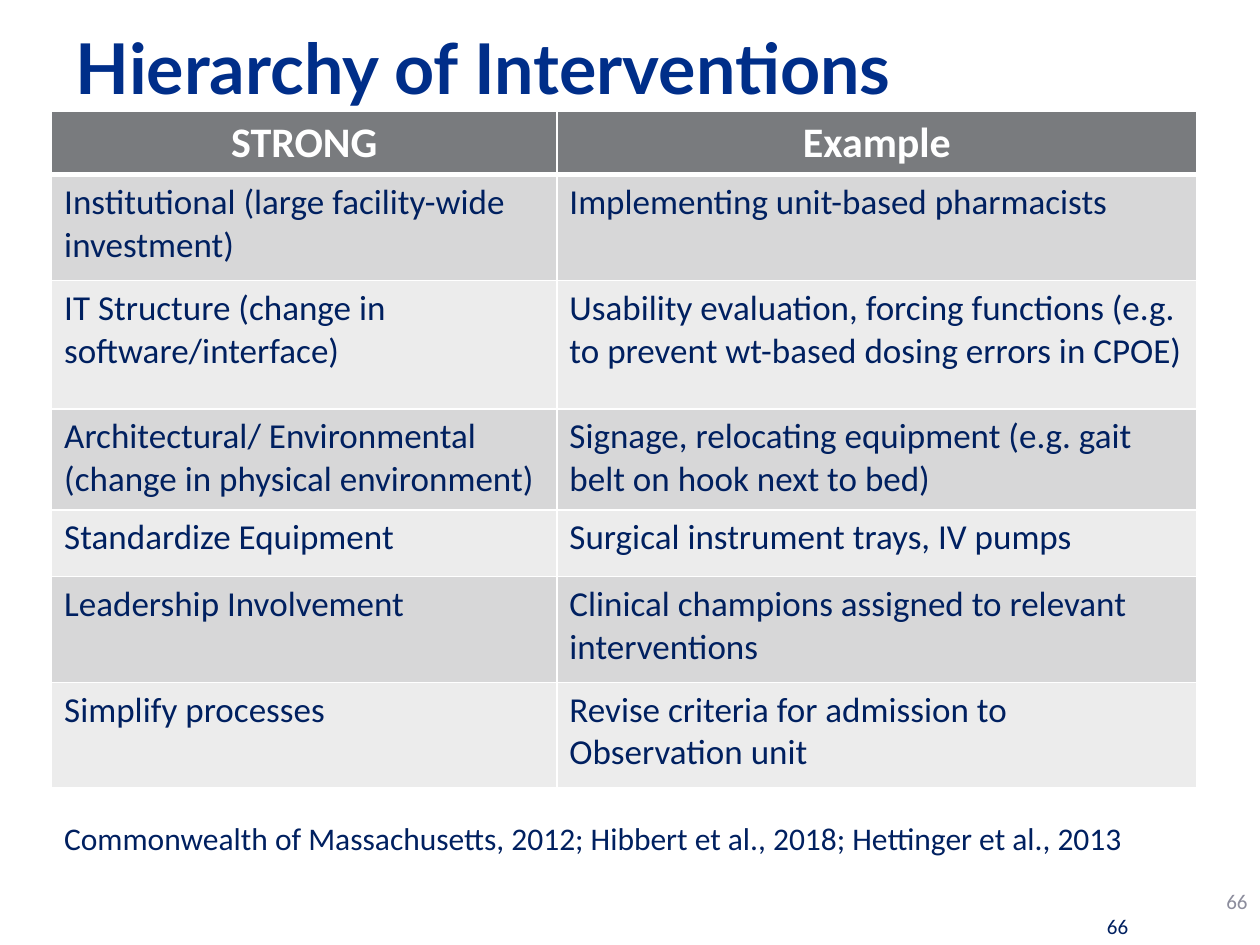
from dataclasses import dataclass

from lxml import etree
from pptx import Presentation
from pptx import util as u
from pptx.dml.color import RGBColor
from pptx.enum import text
from pptx.oxml.ns import qn


@dataclass(frozen=True)
class Theme:
    title_color: str = "002E89"
    body_color: str = "002060"
    muted_color: str = "8C8D9D"
    white: str = "FFFFFF"
    header_fill: str = "797B7E"
    band_fills: tuple[str, str] = ("D7D7D8", "ECECEC")
    title_font: str = "Lato"
    body_font: str = "Calibri"
    title_size: int = 40
    header_size: int = 24
    body_size: int = 20
    source_size: int = 18
    number_size: int = 12


@dataclass(frozen=True)
class Intervention:
    kind: str
    example: str
    height: float


@dataclass(frozen=True)
class Label:
    wording: str
    box: tuple[float, float, float, float]
    size: int
    color: str
    align: text.PP_ALIGN
    wrap: bool = True


THEME = Theme()
LEFT, CENTER, RIGHT = text.PP_ALIGN.LEFT, text.PP_ALIGN.CENTER, text.PP_ALIGN.RIGHT
COLUMN_WIDTHS = (4.01, 5.08)
TABLE_LEFT, TABLE_TOP = 0.41, 0.88

# The first entry is the heading row
INTERVENTIONS = [
    Intervention("STRONG", "Example", 0.49),
    Intervention("Institutional (large facility-wide investment)",
                 "Implementing unit-based pharmacists", 0.84),
    Intervention("IT Structure (change in software/interface)",
                 "Usability evaluation, forcing functions (e.g. to prevent "
                 "wt-based dosing errors in CPOE)", 1.02),
    Intervention("Architectural/ Environmental (change in physical environment)",
                 "Signage, relocating equipment (e.g. gait belt on hook next to bed)", 0.8),
    Intervention("Standardize Equipment", "Surgical instrument trays, IV pumps", 0.53),
    Intervention("Leadership Involvement",
                 "Clinical champions assigned to relevant interventions", 0.84),
    Intervention("Simplify processes",
                 "Revise criteria for admission to Observation unit", 0.84),
]

LABELS = [
    Label("66", (8.58, 7.2, 0.58, 0.3), THEME.number_size, THEME.body_color, CENTER),
    Label("66", (7.67, 6.95, 2.33, 0.4), THEME.number_size, THEME.muted_color, RIGHT),
    Label("Commonwealth of Massachusetts, 2012; Hibbert et al., 2018; Hettinger et al., 2013",
          (0.41, 6.45, 8.71, 0.4), THEME.source_size, THEME.body_color, LEFT, wrap=False),
]


def write(frame, wording: str, size: int, color: str, align: text.PP_ALIGN,
          font: str = THEME.body_font, bold: bool = False) -> None:
    paragraph = frame.paragraphs[0]
    paragraph.alignment = align
    run = paragraph.add_run()
    run.text = wording
    run.font.name = font
    run.font.size = u.Pt(size)
    run.font.bold = bold
    run.font.color.rgb = RGBColor.from_string(color)


def set_borders(cell, bottom_width: float) -> None:
    """Draw white rules; they must come before the fill in the cell properties."""
    properties = cell._tc.get_or_add_tcPr()
    for side, width in (("L", 1), ("R", 1), ("T", 1), ("B", bottom_width)):
        line = etree.SubElement(properties, qn(f"a:ln{side}"), w=str(u.Pt(width)))
        fill = etree.SubElement(line, qn("a:solidFill"))
        etree.SubElement(fill, qn("a:srgbClr"), val=THEME.white)


def add_title(slide, wording: str) -> None:
    title = slide.shapes.title
    title.left, title.top = u.Inches(0.5), u.Inches(0.17)
    title.width, title.height = u.Inches(9), u.Inches(0.72)
    frame = title.text_frame
    frame.auto_size = text.MSO_AUTO_SIZE.NONE
    frame.vertical_anchor = text.MSO_ANCHOR.MIDDLE
    write(frame, wording, THEME.title_size, THEME.title_color, LEFT, THEME.title_font, True)


def add_interventions(slide, rows: list[Intervention]) -> None:
    table = slide.shapes.add_table(
        len(rows), len(COLUMN_WIDTHS), u.Inches(TABLE_LEFT), u.Inches(TABLE_TOP),
        u.Inches(sum(COLUMN_WIDTHS)), u.Inches(sum(row.height for row in rows))).table
    for column, width in zip(table.columns, COLUMN_WIDTHS):
        column.width = u.Inches(width)
    for index, row in enumerate(rows):
        table.rows[index].height = u.Inches(row.height)
        heading = index == 0
        fill = THEME.header_fill if heading else THEME.band_fills[(index - 1) % 2]
        for column, wording in enumerate((row.kind, row.example)):
            cell = table.cell(index, column)
            set_borders(cell, 3 if heading else 1)
            cell.fill.solid()
            cell.fill.fore_color.rgb = RGBColor.from_string(fill)
            if heading:
                write(cell.text_frame, wording, THEME.header_size, THEME.white, CENTER, bold=True)
            else:
                write(cell.text_frame, wording, THEME.body_size, THEME.body_color, LEFT)


def add_label(slide, label: Label) -> None:
    frame = slide.shapes.add_textbox(*map(u.Inches, label.box)).text_frame
    frame.word_wrap = label.wrap
    frame.vertical_anchor = text.MSO_ANCHOR.MIDDLE
    write(frame, label.wording, label.size, label.color, label.align)


def main() -> None:
    presentation = Presentation()
    presentation.slide_width, presentation.slide_height = u.Inches(10), u.Inches(7.5)
    slide = presentation.slides.add_slide(presentation.slide_layouts.get_by_name("Title Only"))

    # Title and table
    add_title(slide, "Hierarchy of Interventions")
    add_interventions(slide, INTERVENTIONS)

    # Page numbers and sources
    for label in LABELS:
        add_label(slide, label)

    presentation.save("out.pptx")


if __name__ == "__main__":
    main()
